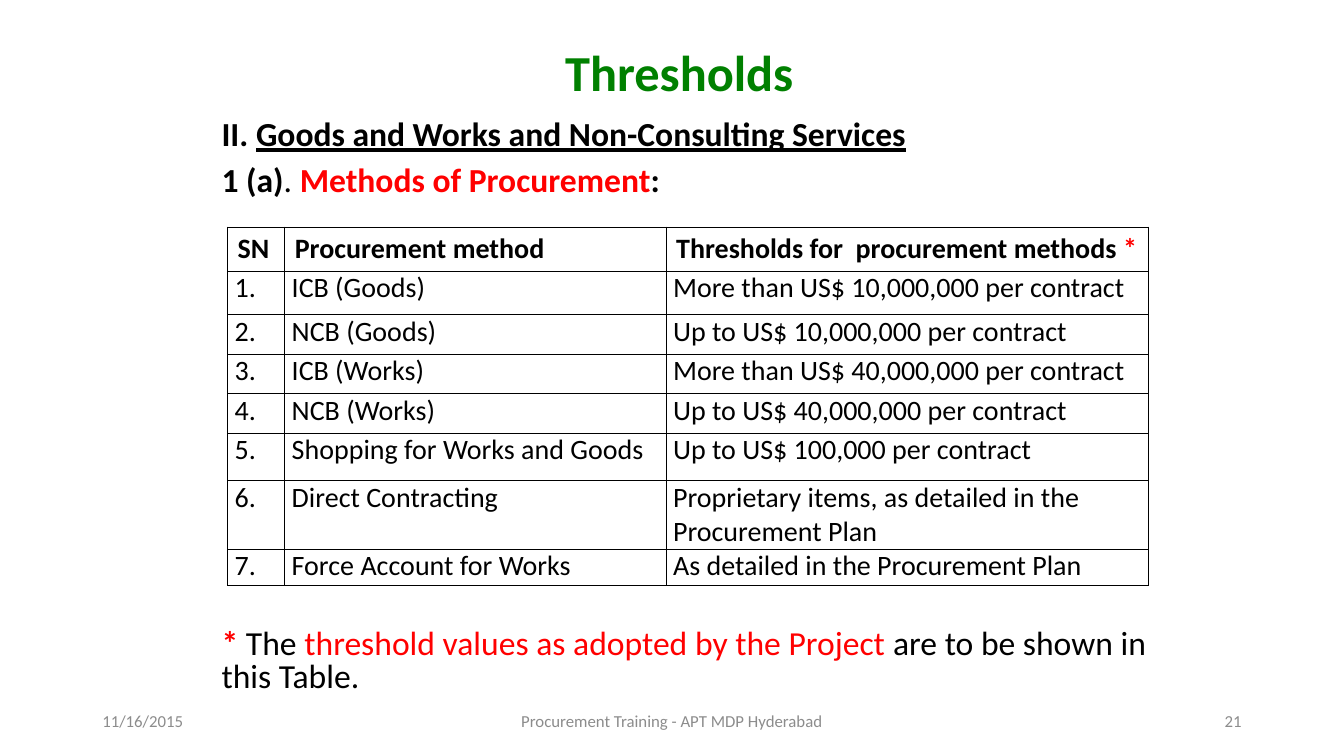
from dataclasses import dataclass

from pptx import Presentation
from pptx import util as u
from pptx.dml.color import RGBColor
from pptx.enum import text
from pptx.oxml import parse_xml
from pptx.oxml.ns import nsdecls

Pt = u.Pt
ALIGN = text.PP_ALIGN
ANCHOR = text.MSO_ANCHOR


@dataclass(frozen=True)
class Theme:
    font: str = "Calibri"
    ink: str = "000000"
    accent: str = "FF0000"
    heading: str = "008000"
    muted: str = "8C8C8C"
    title_size: int = 36
    body_size: int = 24
    table_size: int = 20
    footer_size: int = 12
    border: float = 0.75


@dataclass(frozen=True)
class Span:
    """A piece of a line; an empty color means the ink color."""
    text: str
    color: str = ""
    bold: bool = False
    underline: bool = False


class SlideBuilder:
    def __init__(self, slide, theme):
        self.slide = slide
        self.theme = theme

    def add_spans(self, paragraph, spans, size, align=ALIGN.LEFT):
        paragraph.alignment = align
        for span in spans:
            run = paragraph.add_run()
            run.text = span.text
            font = run.font
            font.name, font.size = self.theme.font, Pt(size)
            font.bold, font.underline = span.bold, span.underline
            font.color.rgb = RGBColor.from_string(span.color or self.theme.ink)

    def add_text(self, box, lines, size, align=ALIGN.LEFT, anchor=ANCHOR.TOP,
                 spacing=1.0, before=0):
        frame = self.slide.shapes.add_textbox(*map(Pt, box)).text_frame
        frame.word_wrap = True
        frame.vertical_anchor = anchor
        for index, spans in enumerate(lines):
            paragraph = frame.add_paragraph() if index else frame.paragraphs[0]
            paragraph.line_spacing = spacing
            paragraph.space_before = Pt(before)
            self.add_spans(paragraph, spans, size, align)

    def add_grid(self, left, top, widths, heights, rows):
        table = self.slide.shapes.add_table(
            len(heights), len(widths), Pt(left), Pt(top),
            Pt(sum(widths)), Pt(sum(heights))).table
        table.first_row = table.horz_banding = False
        for column, width in zip(table.columns, widths):
            column.width = Pt(width)
        for index, (row, height, contents) in enumerate(
                zip(table.rows, heights, rows)):
            row.height = Pt(height)
            for cell, spans in zip(row.cells, contents):
                if index:
                    cell.margin_left = cell.margin_right = Pt(5)
                    cell.margin_top = cell.margin_bottom = 0
                self.add_spans(cell.text_frame.paragraphs[0], spans,
                               self.theme.table_size)
                self.outline(cell)
                cell.fill.background()

    def outline(self, cell):
        properties = cell._tc.get_or_add_tcPr()
        for side in ("lnL", "lnR", "lnT", "lnB"):
            properties.append(parse_xml(
                f'<a:{side} {nsdecls("a")} w="{Pt(self.theme.border)}">'
                f'<a:solidFill><a:srgbClr val="{self.theme.ink}"/></a:solidFill>'
                f'</a:{side}>'))


theme = Theme()
deck = Presentation()
deck.slide_width, deck.slide_height = Pt(960), Pt(540)
builder = SlideBuilder(deck.slides.add_slide(deck.slide_layouts[6]), theme)

# Title
builder.add_text((179.3, 37.4, 612, 39.6),
                 [[Span("Thresholds", theme.heading, bold=True)]],
                 theme.title_size, ALIGN.CENTER, ANCHOR.BOTTOM, spacing=0.9)

# Section headings
section = [
    [Span("II. ", bold=True),
     Span("Goods and Works and Non-Consulting Services",
          bold=True, underline=True)],
    [Span("1 (a)", bold=True), Span(". "),
     Span("Methods of Procurement", theme.accent, bold=True),
     Span(":", bold=True)],
]
builder.add_text((151.2, 82.8, 674.6, 66), section, theme.body_size,
                 spacing=0.8, before=10)

# Threshold table
header = [
    [Span("SN", bold=True)],
    [Span("Procurement method", bold=True)],
    [Span("Thresholds for  procurement methods ", bold=True),
     Span("*", theme.accent, bold=True)],
]
methods = [
    ("ICB (Goods)", "More than US$ 10,000,000 per contract"),
    ("NCB (Goods)", "Up to US$ 10,000,000 per contract"),
    ("ICB (Works)", "More than US$ 40,000,000 per contract"),
    ("NCB (Works)", "Up to US$ 40,000,000 per contract"),
    ("Shopping for Works and Goods", "Up to US$ 100,000 per contract"),
    ("Direct Contracting",
     "Proprietary items, as detailed in the Procurement Plan"),
    ("Force Account for Works", "As detailed in the Procurement Plan"),
]
method_rows = [[[Span(f"{number}.")], [Span(method)], [Span(threshold)]]
               for number, (method, threshold) in enumerate(methods, 1)]
builder.add_grid(162.6, 162.2, (40.8, 272.4, 344.4),
                 (31.6, 31, 28.2, 28.2, 28.2, 33.8, 49.2, 25.8),
                 [header] + method_rows)

# Footnote
footnote = [
    Span("* ", theme.accent, bold=True), Span("The "),
    Span("threshold values as adopted by the Project ", theme.accent),
    Span("are to be shown in this Table."),
]
builder.add_text((151.2, 446.6, 674.6, 56), [footnote], theme.body_size,
                 ALIGN.JUSTIFY, spacing=0.8)

# Footer
footer = [
    (66, 216, "11/16/2015", ALIGN.LEFT),
    (318, 324, "Procurement Training - APT MDP Hyderabad", ALIGN.CENTER),
    (678, 216, "21", ALIGN.RIGHT),
]
for left, width, label, align in footer:
    builder.add_text((left, 500.5, width, 28.8), [[Span(label, theme.muted)]],
                     theme.footer_size, align, ANCHOR.MIDDLE)

deck.save("out.pptx")
